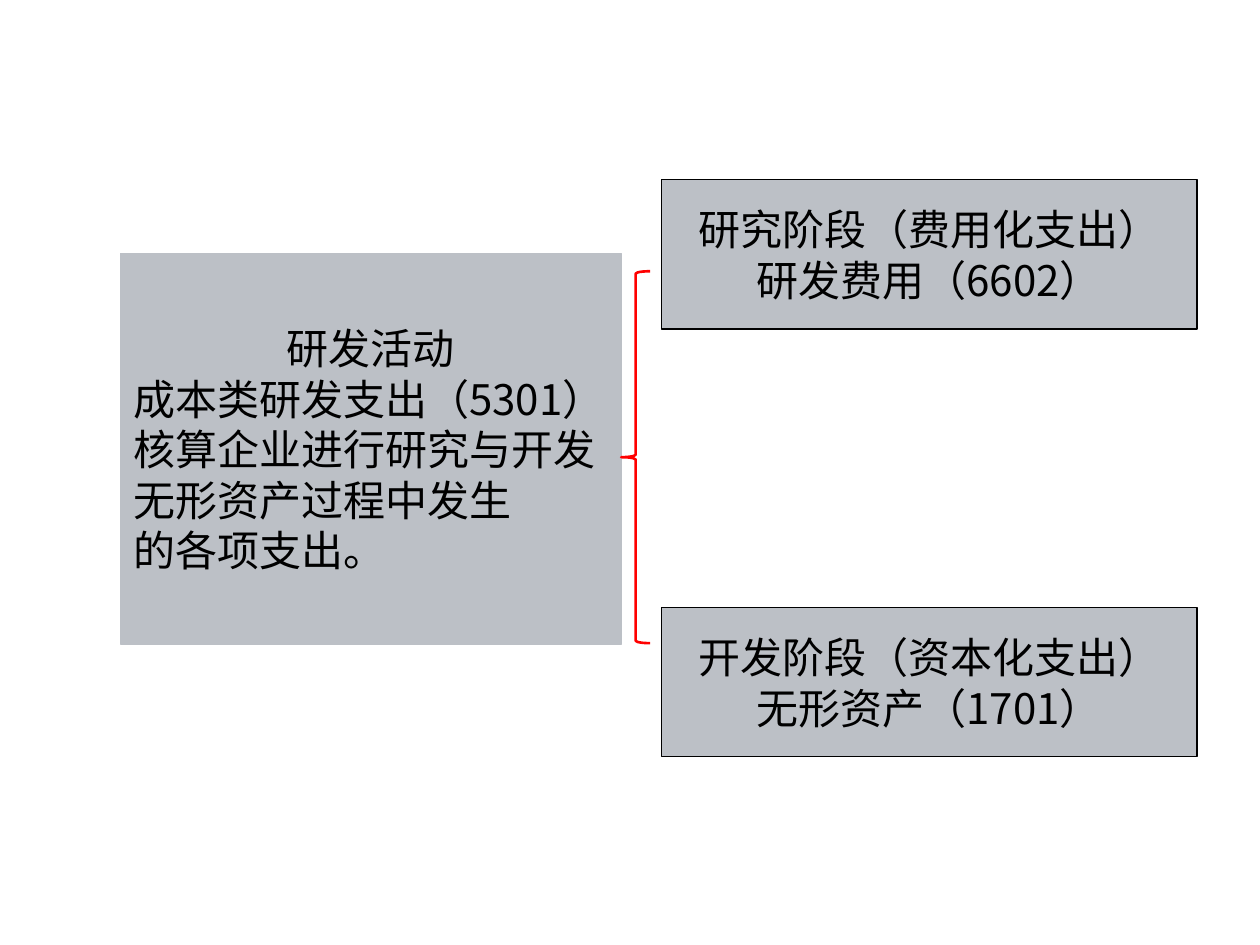
from pptx import Presentation
from pptx.dml.color import RGBColor
from pptx.enum import shapes, text
from pptx.oxml import ns
from pptx.util import Pt
from lxml import etree

FONT = "Noto Sans CJK SC"
GREY = RGBColor(0xBC, 0xC0, 0xC6)
BLACK = RGBColor(0, 0, 0)
RED = RGBColor(0xFF, 0, 0)
LEFT, CENTER = text.PP_ALIGN.LEFT, text.PP_ALIGN.CENTER

STAGE_LEFT, STAGE_WIDTH, STAGE_HEIGHT = 378, 306, 85.5
STAGES = [
    (102.5, ["研究阶段（费用化支出）", "研发费用（6602）"]),
    (347, ["开发阶段（资本化支出）", "无形资产（1701）"]),
]
ACTIVITY = [
    "成本类研发支出（5301）",
    "核算企业进行研究与开发",
    "无形资产过程中发生",
    "的各项支出。",
]


def format_paragraph(para, line, alignment):
    para.text = line
    para.alignment = alignment
    font = para.font
    font.size = Pt(24)
    font.color.rgb = BLACK
    font.name = FONT
    # Chinese glyphs take their typeface from a:ea, next to a:latin.
    latin = para._p.pPr.find(".//" + ns.qn("a:latin"))
    east_asian = etree.Element(ns.qn("a:ea"), typeface=FONT)
    latin.addnext(east_asian)


def add_outlined_shape(slide, kind, bounds, line_color, line_width):
    shape = slide.shapes.add_shape(kind, *map(Pt, bounds))
    shape.shadow.inherit = False
    shape.line.color.rgb = line_color
    shape.line.width = Pt(line_width)
    return shape


def add_text_box(slide, bounds, line_color, lines):
    """Add a grey rectangle; lines holds (wording, alignment) pairs."""
    box = add_outlined_shape(
        slide, shapes.MSO_SHAPE.RECTANGLE, bounds, line_color, 0.75)
    box.fill.solid()
    box.fill.fore_color.rgb = GREY
    frame = box.text_frame
    frame.word_wrap = False
    frame.vertical_anchor = text.MSO_ANCHOR.MIDDLE
    for index, (line, alignment) in enumerate(lines):
        para = frame.add_paragraph() if index else frame.paragraphs[0]
        format_paragraph(para, line, alignment)


def add_brace(slide, bounds):
    brace = add_outlined_shape(
        slide, shapes.MSO_SHAPE.LEFT_BRACE, bounds, RED, 1.5)
    brace.fill.background()


def main():
    deck = Presentation()
    deck.slide_width, deck.slide_height = Pt(720), Pt(540)
    slide = deck.slides.add_slide(deck.slide_layouts[6])

    activity = [("研发活动", CENTER)] + [(line, LEFT) for line in ACTIVITY]
    add_text_box(slide, (69, 145, 286, 223), GREY, activity)
    for top, lines in STAGES:
        bounds = (STAGE_LEFT, top, STAGE_WIDTH, STAGE_HEIGHT)
        add_text_box(slide, bounds, BLACK, [(line, CENTER) for line in lines])
    add_brace(slide, (355, 155, 16.5, 212.5))

    deck.save("out.pptx")


if __name__ == "__main__":
    main()
